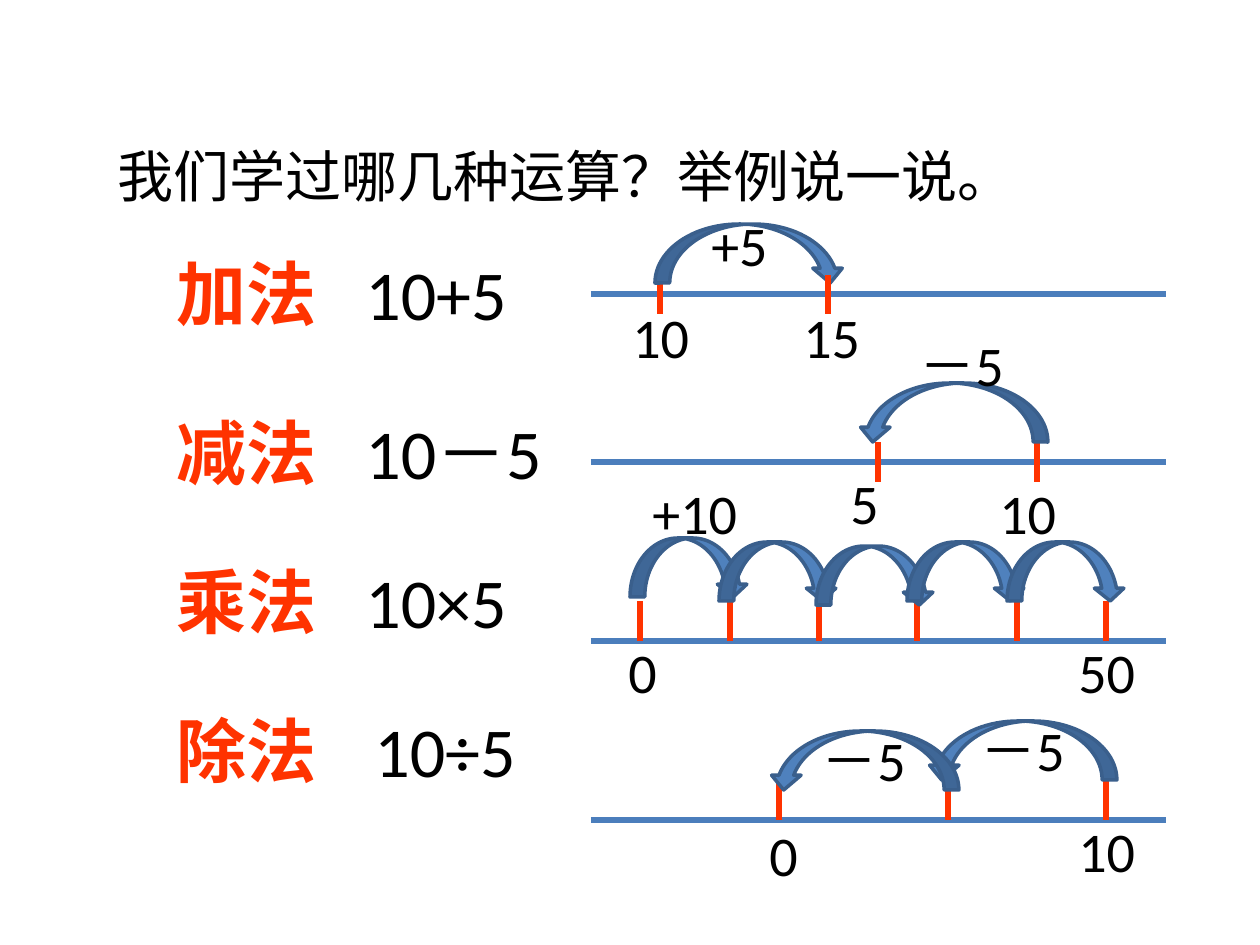
from pptx import Presentation
from pptx.dml.color import RGBColor
from pptx.enum.shapes import MSO_CONNECTOR, MSO_SHAPE
from pptx.enum.text import MSO_ANCHOR, MSO_AUTO_SIZE, PP_ALIGN
from pptx.oxml.ns import qn
from pptx.util import Emu, Pt
from lxml import etree

STRAIGHT = MSO_CONNECTOR.STRAIGHT
HOP = MSO_SHAPE.CURVED_DOWN_ARROW
TOP, LEFT = MSO_ANCHOR.TOP, PP_ALIGN.LEFT
GROW = MSO_AUTO_SIZE.SHAPE_TO_FIT_TEXT
TITLE_ONLY = 5

BLACK, RED = "000000", "FF3300"
AXIS_BLUE, HOP_FILL, HOP_LINE = "4B7EBC", "4F81BD", "3A5F8C"

# Content: positions in px, 126 px to the inch
QUESTION = "我们学过哪几种运算？举例说一说。"

OPERATIONS = [  # name, example, example left, top
    ("加法", "10+5", 353, 244),
    ("减法", "10－5", 353, 403),
    ("乘法", "10×5", 353, 552),
    ("除法", "10÷5", 362, 701),
]

# Ticks run from tick_top to tick_bottom relative to the axis;
# hops are (left, top); labels are (text, left, top, width)
NUMBER_LINES = [
    dict(axis=294, tick_span=(-19, 20), ticks=[660], front_ticks=[828],
         hops=[(655, 224)], hop_width=190, backward=False, head=0.25,
         labels=[("10", 620, 296, 89), ("+5", 699, 204, 89),
                 ("15", 791, 296, 89)]),
    dict(axis=462, tick_span=(-20, 20), ticks=[878, 1037], front_ticks=[],
         hops=[(858, 383)], hop_width=190, backward=True, head=0.25,
         labels=[("10", 987, 472, 89), ("5", 838, 462, 89),
                 ("－5", 907, 324, 139)]),
    dict(axis=641, tick_span=(-40, 0),
         ticks=[640, 730, 819, 917, 1017, 1106], front_ticks=[],
         hops=[(630, 538), (719, 542), (816, 546), (907, 542), (1007, 542)],
         hop_width=118, backward=False, head=0.216,
         labels=[("+10", 640, 472, 129), ("0", 616, 631, 89),
                 ("50", 1066, 631, 89)]),
    dict(axis=820, tick_span=(-40, 0), ticks=[779, 948, 1106], front_ticks=[],
         hops=[(927, 721), (769, 731)], hop_width=190, backward=True,
         head=0.25,
         labels=[("－5", 968, 709, 139), ("10", 1066, 810, 89),
                 ("－5", 809, 719, 139), ("0", 757, 814, 89)]),
]

AXIS_START, AXIS_END = 591, 1166
HOP_HEIGHT = 59


def px(*lengths):
    return [Emu(round(length * 914400 / 126)) for length in lengths]


def color(hex_value):
    return RGBColor.from_string(hex_value)


def apply(target, values):
    for name, value in values.items():
        setattr(target, name, value)


def write(holder, text, size, ink=BLACK, bold=False):
    frame = holder.text_frame
    apply(frame, dict(text=text, word_wrap=True, auto_size=GROW,
                      vertical_anchor=TOP))
    paragraph = frame.paragraphs[0]
    paragraph.alignment = LEFT
    font = paragraph.runs[0].font
    apply(font, dict(name="Calibri", size=Pt(size), bold=bold))
    font.color.rgb = color(ink)


def add_label(slide, text, left, top, width, height, size, **style):
    box = slide.shapes.add_textbox(*px(left, top, width, height))
    write(box, text, size, **style)


def add_line(slide, x1, y1, x2, y2, ink):
    line = slide.shapes.add_connector(STRAIGHT, *px(x1, y1, x2, y2))
    line.line.width = Pt(3)
    line.line.color.rgb = color(ink)
    etree.SubElement(line._element.spPr, qn("a:effectLst"))


def add_hop(slide, left, top, width, head, backward):
    hop = slide.shapes.add_shape(HOP, *px(left, top, width, HOP_HEIGHT))
    hop.shadow.inherit = False
    hop.fill.solid()
    hop.fill.fore_color.rgb = color(HOP_FILL)
    hop.line.color.rgb = color(HOP_LINE)
    hop.line.width = Pt(2)
    hop.adjustments[2] = head
    if backward:
        hop._element.spPr.find(qn("a:xfrm")).set("flipH", "1")


def add_number_line(slide, row):
    axis = row["axis"]
    tick_top, tick_bottom = (axis + offset for offset in row["tick_span"])

    def add_ticks(positions):
        for x in positions:
            add_line(slide, x, tick_bottom, x, tick_top, RED)

    add_line(slide, AXIS_START, axis, AXIS_END, axis, AXIS_BLUE)
    add_ticks(row["ticks"])
    for left, top in row["hops"]:
        add_hop(slide, left, top, row["hop_width"], row["head"],
                row["backward"])
    add_ticks(row["front_ticks"])
    for text, left, top, width in row["labels"]:
        add_label(slide, text, left, top, width, 81, 32)


def main():
    deck = Presentation()
    deck.slide_width, deck.slide_height = px(1260, 945)
    slide = deck.slides.add_slide(deck.slide_layouts[TITLE_ONLY])

    # Question
    question = slide.shapes.title
    left, top, width, height = px(105, 135, 1042, 81)
    apply(question, dict(left=left, top=top, width=width, height=height))
    write(question, QUESTION, 32)

    # Operations with their examples
    for name, example, example_left, top in OPERATIONS:
        add_label(slide, name, 164, top, 179, 97, 40, ink=RED, bold=True)
        add_label(slide, example, example_left, top, 248, 97, 40)

    # Number lines
    for row in NUMBER_LINES:
        add_number_line(slide, row)

    deck.save("out.pptx")


if __name__ == "__main__":
    main()
